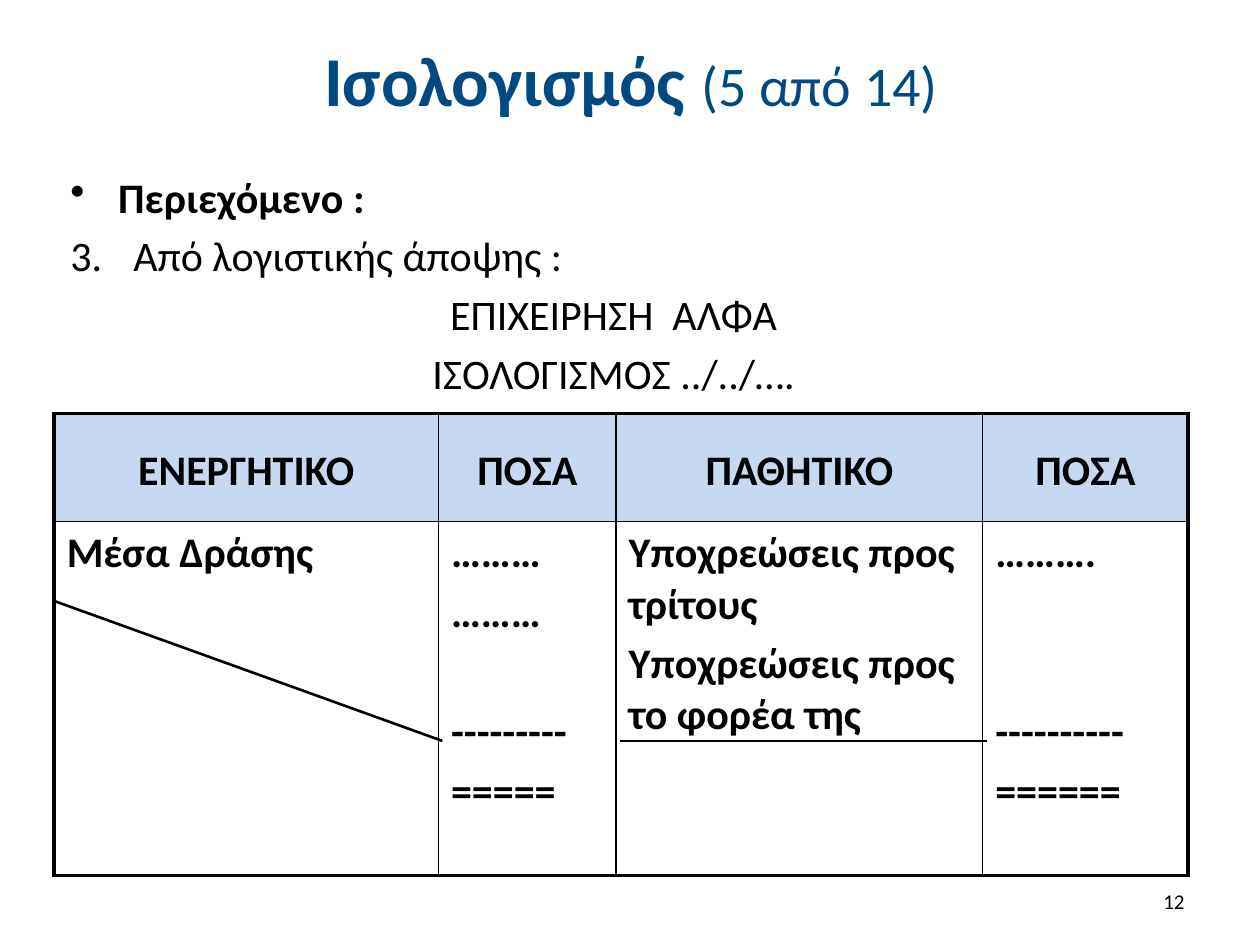
from dataclasses import dataclass

from lxml import etree
from pptx import Presentation
from pptx.dml.color import RGBColor
from pptx.enum.shapes import MSO_CONNECTOR
from pptx.enum.text import MSO_ANCHOR, PP_ALIGN
from pptx.oxml.ns import qn
from pptx.util import Emu, Inches, Pt


@dataclass(frozen=True)
class Theme:
    font: str = "Calibri"
    title: RGBColor = RGBColor(0x00, 0x4A, 0x82)
    ink: RGBColor = RGBColor(0x00, 0x00, 0x00)
    header: RGBColor = RGBColor(0xC6, 0xD9, 0xF1)
    title_size: int = 40
    count_size: int = 32
    body_size: int = 24
    number_size: int = 12
    gap: float = 4.8
    blank_line: float = 34.1
    thin: float = 1
    rule: float = 1.5
    thick: float = 2.25


THEME = Theme()
WIDTH, HEIGHT = 10, 7.5
TITLE_BOX = (0.51, 0.13, 9, 0.99)
BODY_BOX = (0.46, 1.31, 8.82, 1.97)
TABLE_BOX = (0.43, 3.28, 9, 3.66)
NUMBER_BOX = (7.17, 6.95, 2.33, 0.4)

COLUMNS = (3.05, 1.41, 2.91, 1.63)
ROWS = (0.86, 2.81)
HEADINGS = ("ENEΡΓΗΤΙΚΟ", "ΠΟΣΑ", "ΠΑΘΗΤΙΚΟ", "ΠΟΣΑ")
# Each entry is a text and the number of open lines above it.
ENTRIES = (
    (("Μέσα Δράσης", 0),),
    (("………", 0), ("………", 0), ("---------", 1), ("=====", 0)),
    (("Υποχρεώσεις προς τρίτους", 0), ("Υποχρεώσεις προς το φορέα της", 0)),
    (("……….", 0), ("----------", 2), ("======", 0)),
)


def add_run(p, text, size=THEME.body_size, bold=False, color=THEME.ink):
    r = p.add_run()
    r.text = text
    r.font.name = THEME.font
    r.font.size = Pt(size)
    r.font.bold = bold
    r.font.color.rgb = color


def add_text_frame(s, box, anchor):
    tf = s.shapes.add_textbox(*map(Inches, box)).text_frame
    tf.word_wrap = True
    tf.vertical_anchor = anchor
    return tf


def next_paragraph(tf, index, open_lines=0):
    """Return the paragraph at index, spaced from the one above it."""
    if index == 0:
        return tf.paragraphs[0]
    p = tf.add_paragraph()
    p.space_before = Pt(THEME.gap + open_lines * THEME.blank_line)
    return p


def set_marker(p, indent, tag, **attributes):
    """Give a paragraph a hanging indent and a bullet element."""
    pPr = p._p.get_or_add_pPr()
    pPr.set("marL", str(Inches(indent)))
    pPr.set("indent", str(-Inches(indent)))
    etree.SubElement(pPr, qn(f"a:{tag}"), **attributes)


def add_title(s, box):
    p = add_text_frame(s, box, MSO_ANCHOR.MIDDLE).paragraphs[0]
    p.alignment = PP_ALIGN.CENTER
    add_run(p, "Ισολογισμός ", THEME.title_size, True, THEME.title)
    add_run(p, "(5 από 14)", THEME.count_size, False, THEME.title)


def add_body(s, box):
    tf = add_text_frame(s, box, MSO_ANCHOR.TOP)
    numbered = {"type": "arabicPeriod", "startAt": "3"}
    lines = (
        ("Περιεχόμενο :", True, PP_ALIGN.LEFT, 0.38, "buChar", {"char": "•"}),
        ("Από λογιστικής άποψης :", False, PP_ALIGN.LEFT, 0.5, "buAutoNum", numbered),
        ("ΕΠΙΧΕΙΡΗΣΗ  ΑΛΦΑ", False, PP_ALIGN.CENTER, 0.38, "buNone", {}),
        ("ΙΣΟΛΟΓΙΣΜΟΣ ../../….", False, PP_ALIGN.CENTER, 0.38, "buNone", {}),
    )
    for i, (text, bold, align, indent, tag, attributes) in enumerate(lines):
        p = next_paragraph(tf, i)
        p.alignment = align
        set_marker(p, indent, tag, **attributes)
        add_run(p, text, bold=bold)


def set_borders(cell, widths):
    """Draw the left, right, top and bottom borders, widths in points."""
    tcPr = cell._tc.get_or_add_tcPr()
    for i, (side, width) in enumerate(zip("LRTB", widths)):
        ln = etree.Element(qn(f"a:ln{side}"), w=str(Pt(width)))
        fill = etree.SubElement(ln, qn("a:solidFill"))
        etree.SubElement(fill, qn("a:srgbClr"), val=str(THEME.ink))
        tcPr.insert(i, ln)


def add_balance_sheet(s, box):
    table = s.shapes.add_table(len(ROWS), len(COLUMNS), *map(Inches, box)).table
    table.first_row = table.horz_banding = False
    for row, height in zip(table.rows, ROWS):
        row.height = Inches(height)
    last = len(COLUMNS) - 1
    for c, width in enumerate(COLUMNS):
        table.columns[c].width = Inches(width)
        head, entry = table.cell(0, c), table.cell(1, c)

        head.fill.solid()
        head.fill.fore_color.rgb = THEME.header
        p = head.text_frame.paragraphs[0]
        p.alignment = PP_ALIGN.CENTER
        p.line_spacing = 1.5
        add_run(p, HEADINGS[c], bold=True)

        entry.fill.background()
        for i, (text, open_lines) in enumerate(ENTRIES[c]):
            add_run(next_paragraph(entry.text_frame, i, open_lines), text, bold=True)

        left = THEME.thick if c == 0 else THEME.thin
        right = THEME.thick if c == last else THEME.thin
        set_borders(head, (left, right, THEME.thick, THEME.thin))
        set_borders(entry, (left, right, THEME.thin, THEME.thick))


def add_closing_rules(s, box):
    """Close the two text columns of the table with lines that meet the totals."""
    x, y = box[:2]
    overlap = 0.03
    start, total = y + 1.49, y + 2.6
    liabilities = x + sum(COLUMNS[:2]) + overlap
    ends = (
        (liabilities, total, liabilities + COLUMNS[2], total),
        (x, start, x + COLUMNS[0] + overlap, total),
    )
    for points in ends:
        line = s.shapes.add_connector(MSO_CONNECTOR.STRAIGHT, *map(Inches, points))
        line.line.color.rgb = THEME.ink
        line.line.width = Pt(THEME.rule)
        etree.SubElement(line._element.spPr, qn("a:effectLst"))


def add_slide_number(s, box):
    p = add_text_frame(s, box, MSO_ANCHOR.MIDDLE).paragraphs[0]
    p.alignment = PP_ALIGN.RIGHT
    add_run(p, "12", THEME.number_size)


def main():
    prs = Presentation()
    prs.slide_width, prs.slide_height = Inches(WIDTH), Inches(HEIGHT)
    s = prs.slides.add_slide(prs.slide_layouts[6])
    add_title(s, TITLE_BOX)
    add_body(s, BODY_BOX)
    add_balance_sheet(s, TABLE_BOX)
    add_closing_rules(s, TABLE_BOX)
    add_slide_number(s, NUMBER_BOX)
    prs.save("out.pptx")


if __name__ == "__main__":
    main()
